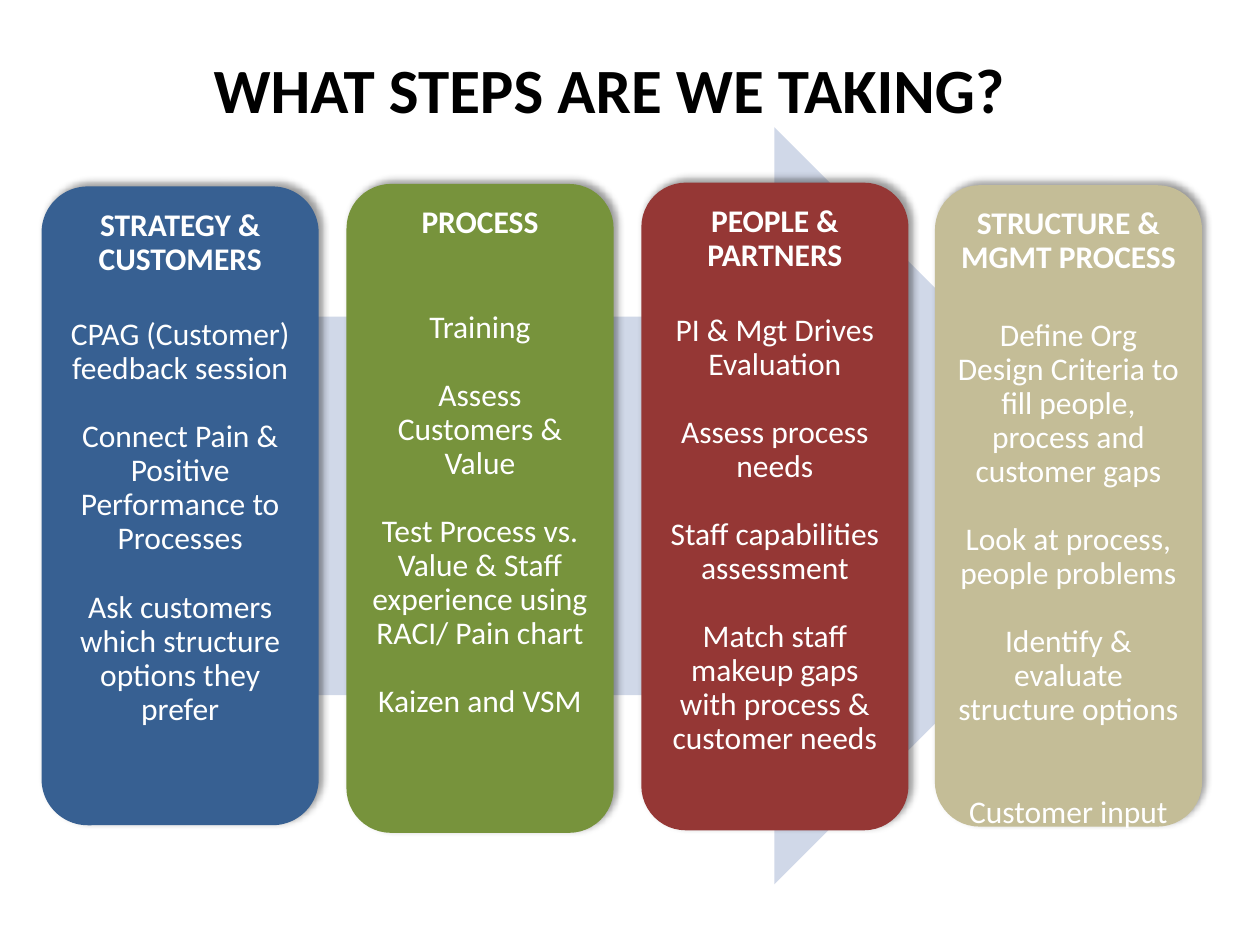
import dataclasses
import pptx
import pptx.dml.color
import pptx.enum.shapes
import pptx.enum.text
import pptx.util
import lxml.etree

COLS, ROWS = 100, 75
SHAPES = pptx.enum.shapes.MSO_SHAPE
ANCHOR = pptx.enum.text.MSO_ANCHOR
NS = "http://schemas.openxmlformats.org/drawingml/2006/main"


@dataclasses.dataclass(frozen=True)
class Theme:
    """Hold the colours, type sizes and spacing of the slide."""
    font: str = "Calibri"
    ink: str = "000000"
    paper: str = "FFFFFF"
    arrow: str = "D0D8E8"
    title_size: float = 36
    body_size: float = 18
    line_spacing: float = 0.9
    item_gap: float = 19.5
    inset: float = 0.07


THEME = Theme()

CARDS = [
    {"box": (3.3, 14.8, 22, 50.7), "color": "376092", "head": "STRATEGY & CUSTOMERS",
     "first_gap": 23.5, "last_gap": THEME.item_gap,
     "items": ["CPAG (Customer) feedback session",
               "Connect Pain & Positive Performance to Processes",
               "Ask customers which structure options they prefer"]},
    {"box": (27.5, 14.6, 21.2, 51.5), "color": "77933C", "head": "PROCESS",
     "first_gap": 40.5, "last_gap": THEME.item_gap,
     "items": ["Training", "Assess Customers & Value",
               "Test Process vs. Value & Staff experience using RACI/ Pain chart",
               "Kaizen and VSM"]},
    {"box": (50.9, 14.5, 21.2, 51.4), "color": "953735", "head": "PEOPLE & PARTNERS",
     "first_gap": 23.5, "last_gap": THEME.item_gap,
     "items": ["PI & Mgt Drives Evaluation", "Assess process needs",
               "Staff capabilities assessment",
               "Match staff makeup gaps with process & customer needs"]},
    {"box": (74.2, 14.7, 21.2, 50.9), "color": "C4BD97", "head": "STRUCTURE & MGMT PROCESS",
     "first_gap": 25, "last_gap": 2 * THEME.item_gap,
     "items": ["Define Org Design Criteria to fill people, process and customer gaps",
               "Look at process, people problems",
               "Identify & evaluate structure options", "Customer input"]},
]


def place(prs, box):
    """Turn a box in grid columns and rows into slide lengths."""
    x, y, w, h = box
    col, row = prs.slide_width / COLS, prs.slide_height / ROWS
    return [round(v) for v in (x * col, y * row, w * col, h * row)]


def set_all(target, values):
    """Set each named attribute on the target."""
    for name, value in values.items():
        setattr(target, name, value)


def add_block(prs, s, kind, box, color):
    """Add a filled preset shape without outline or shadow."""
    sp = s.shapes.add_shape(kind, *place(prs, box))
    sp.shadow.inherit = False
    sp.fill.solid()
    sp.fill.fore_color.rgb = pptx.dml.color.RGBColor.from_string(color)
    sp.line.fill.background()
    return sp


def add_shadow(sp):
    """Give the shape a soft shadow towards the upper right."""
    effects = sp._element.spPr.find(f"{{{NS}}}effectLst")
    shadow = lxml.etree.SubElement(effects, f"{{{NS}}}outerShdw", blurRad="50800",
                                   dist="38100", dir="18900000", algn="bl", rotWithShape="0")
    black = lxml.etree.SubElement(shadow, f"{{{NS}}}srgbClr", val=THEME.ink)
    lxml.etree.SubElement(black, f"{{{NS}}}alpha", val="40000")


def add_text(prs, s, box, frame):
    """Add a wrapping text box and return its text frame."""
    tf = s.shapes.add_textbox(*place(prs, box)).text_frame
    set_all(tf, {"word_wrap": True, **frame})
    return tf


def write(p, text, size, color, bold, gap=0, spacing=1.0):
    """Write one centred paragraph."""
    set_all(p, {"alignment": pptx.enum.text.PP_ALIGN.CENTER, "line_spacing": spacing,
                "space_before": pptx.util.Pt(gap)})
    r = p.add_run()
    r.text = text
    set_all(r.font, {"name": THEME.font, "size": pptx.util.Pt(size), "bold": bold})
    r.font.color.rgb = pptx.dml.color.RGBColor.from_string(color)


def draw_title(prs, s, box, text):
    """Draw the slide title."""
    tf = add_text(prs, s, box, {"vertical_anchor": ANCHOR.MIDDLE})
    write(tf.paragraphs[0], text, THEME.title_size, THEME.ink, True)


def draw_card(prs, s, box, color, head, items, first_gap, last_gap):
    """Draw a rounded card with its heading and spaced items."""
    x, y, w, h = box
    add_shadow(add_block(prs, s, SHAPES.ROUNDED_RECTANGLE, box, color))
    pad = w * 0.05
    sides = ("margin_left", "margin_top", "margin_right", "margin_bottom")
    frame = {"vertical_anchor": ANCHOR.TOP,
             **dict.fromkeys(sides, pptx.util.Inches(THEME.inset))}
    tf = add_text(prs, s, (x + pad, y + pad, w - 2 * pad, h - 2 * pad), frame)
    style = {"size": THEME.body_size, "color": THEME.paper, "spacing": THEME.line_spacing}
    write(tf.paragraphs[0], head, bold=True, **style)
    gaps = [first_gap] + [THEME.item_gap] * (len(items) - 2) + [last_gap]
    for item, gap in zip(items, gaps):
        write(tf.add_paragraph(), item, bold=False, gap=gap, **style)


def main():
    """Build and save the slide."""
    prs = pptx.Presentation()
    set_all(prs, {"slide_width": pptx.util.Inches(10), "slide_height": pptx.util.Inches(7.5)})
    s = prs.slides.add_slide(prs.slide_layouts[6])
    draw_title(prs, s, (2.6, 3.2, 91.5, 7.6), "WHAT STEPS ARE WE TAKING?")
    add_block(prs, s, SHAPES.RIGHT_ARROW, (7.4, 10.1, 84.1, 60.1), THEME.arrow)
    for card in CARDS:
        draw_card(prs, s, **card)
    prs.save("out.pptx")


if __name__ == "__main__":
    main()
